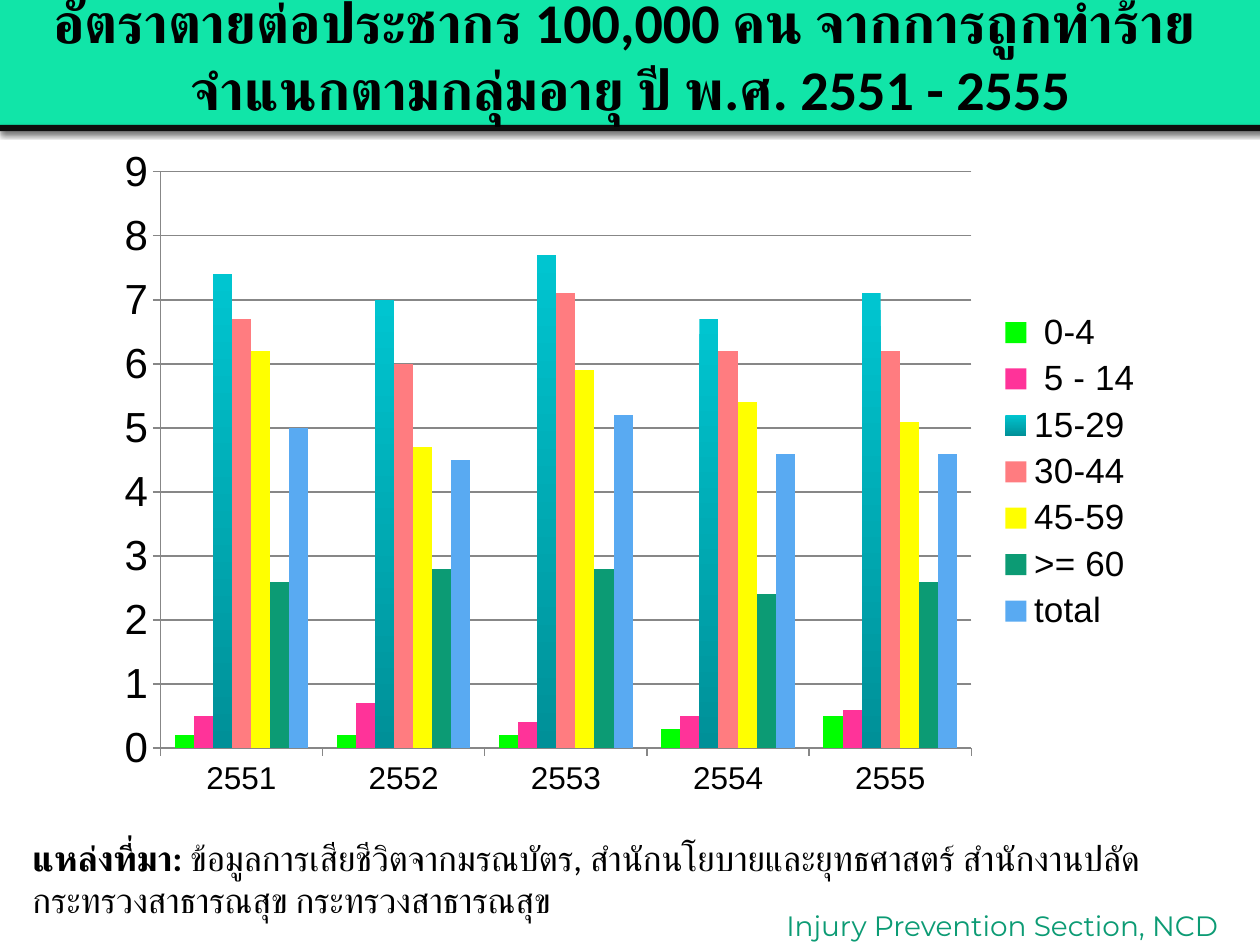
from lxml import etree
from pptx import Presentation
from pptx.chart.data import CategoryChartData
from pptx.dml.color import RGBColor
from pptx.enum.chart import XL_CHART_TYPE, XL_LEGEND_POSITION, XL_TICK_MARK
from pptx.enum.shapes import MSO_SHAPE
from pptx.enum.text import MSO_ANCHOR, PP_ALIGN
from pptx.oxml import parse_xml
from pptx.oxml.ns import nsdecls, qn
from pptx.util import Inches, Pt

COLUMNS = XL_CHART_TYPE.COLUMN_CLUSTERED
LEGEND_RIGHT = XL_LEGEND_POSITION.RIGHT
TICK_OUTSIDE = XL_TICK_MARK.OUTSIDE
RECTANGLE = MSO_SHAPE.RECTANGLE
TOP, MIDDLE = MSO_ANCHOR.TOP, MSO_ANCHOR.MIDDLE
LEFT, CENTER = PP_ALIGN.LEFT, PP_ALIGN.CENTER

BLACK = RGBColor(0x00, 0x00, 0x00)
NEAR_BLACK = RGBColor(0x0D, 0x0D, 0x0D)
MINT = RGBColor(0x11, 0xE5, 0xA8)
GREEN = RGBColor(0x0C, 0x9B, 0x74)
GRAY = RGBColor(0x87, 0x87, 0x87)
LIME = RGBColor(0x00, 0xFF, 0x00)
PINK = RGBColor(0xFF, 0x33, 0x99)
TEAL_LIGHT = RGBColor(0x00, 0xC5, 0xD0)
TEAL_DARK = RGBColor(0x00, 0x90, 0x98)
SALMON = RGBColor(0xFF, 0x7C, 0x80)
YELLOW = RGBColor(0xFF, 0xFF, 0x00)
BLUE = RGBColor(0x59, 0xAA, 0xF2)

YEARS = ["2551", "2552", "2553", "2554", "2555"]
# Age group, death rates by year, colours (two make a gradient)
AGE_GROUPS = [
    (" 0-4", (0.2, 0.2, 0.2, 0.3, 0.5), (LIME,)),
    (" 5 - 14", (0.5, 0.7, 0.4, 0.5, 0.6), (PINK,)),
    ("15-29", (7.4, 7, 7.7, 6.7, 7.1), (TEAL_LIGHT, TEAL_DARK)),
    ("30-44", (6.7, 6, 7.1, 6.2, 6.2), (SALMON,)),
    ("45-59", (6.2, 4.7, 5.9, 5.4, 5.1), (YELLOW,)),
    (">= 60", (2.6, 2.8, 2.8, 2.4, 2.6), (GREEN,)),
    ("total", (5, 4.5, 5.2, 4.6, 4.6), (BLUE,)),
]
PLOT_LAYOUT = {"x": 0.053, "y": 0.055, "w": 0.771, "h": 0.855}


def add_band(slide, top, height, color):
    band = slide.shapes.add_shape(
        RECTANGLE, Inches(0), Inches(top), Inches(10.04), Inches(height))
    band.fill.solid()
    band.fill.fore_color.rgb = color
    band.line.fill.background()
    band.shadow.inherit = False
    effects = band._element.spPr.find(qn("a:effectLst"))
    effects.append(parse_xml(
        f'<a:outerShdw {nsdecls("a")} blurRad="{Pt(3.1)}" dist="{Pt(1.6)}" '
        'dir="5400000" rotWithShape="0"><a:srgbClr val="000000">'
        '<a:alpha val="38000"/></a:srgbClr></a:outerShdw>'))


def add_text(slide, box, parts, size, font_name, color, align=LEFT, anchor=TOP):
    """Add one paragraph made of (text, bold) parts."""
    shape = slide.shapes.add_textbox(*map(Inches, box))
    frame = shape.text_frame
    frame.word_wrap = True
    frame.vertical_anchor = anchor
    paragraph = frame.paragraphs[0]
    paragraph.alignment = align
    for index, (text, bold) in enumerate(parts):
        if index:
            paragraph.add_run().text = text
        else:
            paragraph.text = text
        for run in paragraph.runs[index:]:
            run.font.bold = bold
    for run in paragraph.runs:
        run.font.size = Pt(size)
        run.font.name = font_name
        run.font.color.rgb = color
        # Thai letters take the complex-script font
        complex_font = etree.SubElement(run.font._element, qn("a:cs"))
        complex_font.set("typeface", font_name)


def style_font(font, size):
    font.name = "Arial"
    font.size = Pt(size)
    font.color.rgb = BLACK


def style_axis(axis, size):
    axis.major_tick_mark = TICK_OUTSIDE
    axis.format.line.color.rgb = GRAY
    style_font(axis.tick_labels.font, size)


def set_plot_layout(chart):
    plot_area = chart._chartSpace.chart.plotArea
    for old_layout in plot_area.findall(qn("c:layout")):
        plot_area.remove(old_layout)
    sizes = "".join(f'<c:{key} val="{value}"/>' for key, value in PLOT_LAYOUT.items())
    plot_area.insert(0, parse_xml(
        f'<c:layout {nsdecls("c")}><c:manualLayout><c:layoutTarget val="inner"/>'
        '<c:xMode val="edge"/><c:yMode val="edge"/>'
        f'{sizes}</c:manualLayout></c:layout>'))


def fill_series(fill, colors):
    if len(colors) == 1:
        fill.solid()
        fill.fore_color.rgb = colors[0]
        return
    fill.gradient()
    fill.gradient_angle = 270
    for stop, color, position in zip(fill.gradient_stops, colors, (0, 1)):
        stop.color.rgb = color
        stop.position = position


def add_rate_chart(slide):
    data = CategoryChartData(number_format="0.0")
    data.categories = YEARS
    for name, rates, _ in AGE_GROUPS:
        data.add_series(name, rates)
    chart = slide.shapes.add_chart(
        COLUMNS, Inches(0.83), Inches(1.07), Inches(8.35), Inches(5.35), data).chart
    chart.has_title = False
    style_font(chart.font, 18)
    set_plot_layout(chart)

    # Columns
    plot = chart.plots[0]
    plot.gap_width = 150
    plot.overlap = 0
    plot.vary_by_categories = False
    for series, (_, _, colors) in zip(plot.series, AGE_GROUPS):
        series.invert_if_negative = False
        fill_series(series.format.fill, colors)

    # Axes and legend
    style_axis(chart.category_axis, 18)
    axis = chart.value_axis
    style_axis(axis, 24)
    axis.minimum_scale, axis.maximum_scale, axis.major_unit = 0, 9, 1
    axis.tick_labels.number_format = "0"
    axis.tick_labels.number_format_is_linked = False
    axis.major_gridlines.format.line.color.rgb = GRAY
    chart.has_legend = True
    chart.legend.position = LEGEND_RIGHT
    chart.legend.include_in_layout = False
    style_font(chart.legend.font, 20)


def main():
    presentation = Presentation()
    presentation.slide_width = Inches(10)
    presentation.slide_height = Inches(7.5)
    slide = presentation.slides.add_slide(presentation.slide_layouts[6])

    # Header bands and section name
    add_band(slide, -0.02, 1.06, MINT)
    add_band(slide, 0.99, 0.05, NEAR_BLACK)
    add_text(slide, (5.87, 7.16, 4.17, 0.37),
             [("Injury Prevention Section, NCD", False)],
             16, "Montserrat", GREEN, CENTER)

    add_rate_chart(slide)

    # Title and source
    add_text(slide, (0.28, -0.19, 9.45, 1.25),
             [("อัตราตายต่อประชากร 100,000 คน จากการถูกทำร้าย \v"
               "จำแนกตามกลุ่มอายุ ปี พ.ศ. 2551 - 2555", True)],
             32, "Calibri", BLACK, CENTER, MIDDLE)
    add_text(slide, (0.16, 6.59, 9.8, 0.44),
             [("แหล่งที่มา:", True),
              (" ข้อมูลการเสียชีวิตจากมรณบัตร, สำนักนโยบายและยุทธศาสตร์ "
               "สำนักงานปลัดกระทรวงสาธารณสุข กระทรวงสาธารณสุข", False)],
             20, "Calibri", BLACK)

    presentation.save("out.pptx")


if __name__ == "__main__":
    main()
